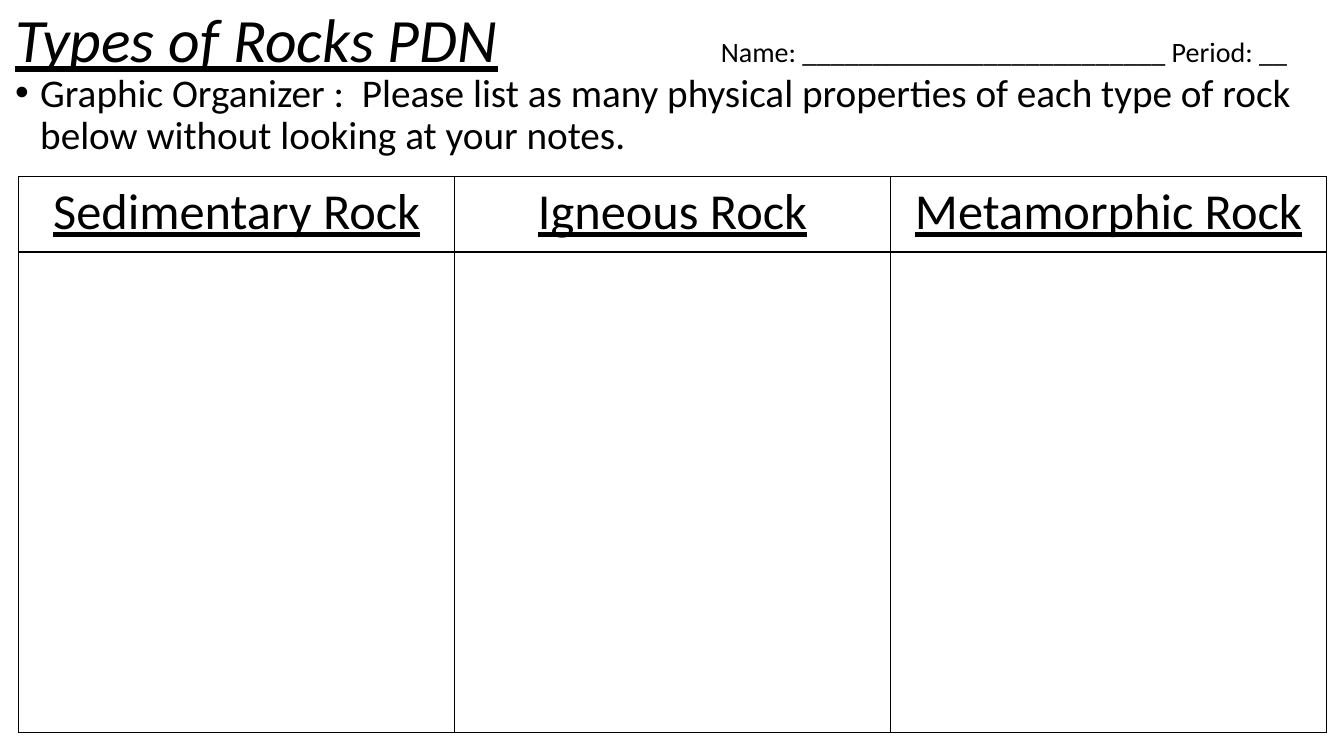
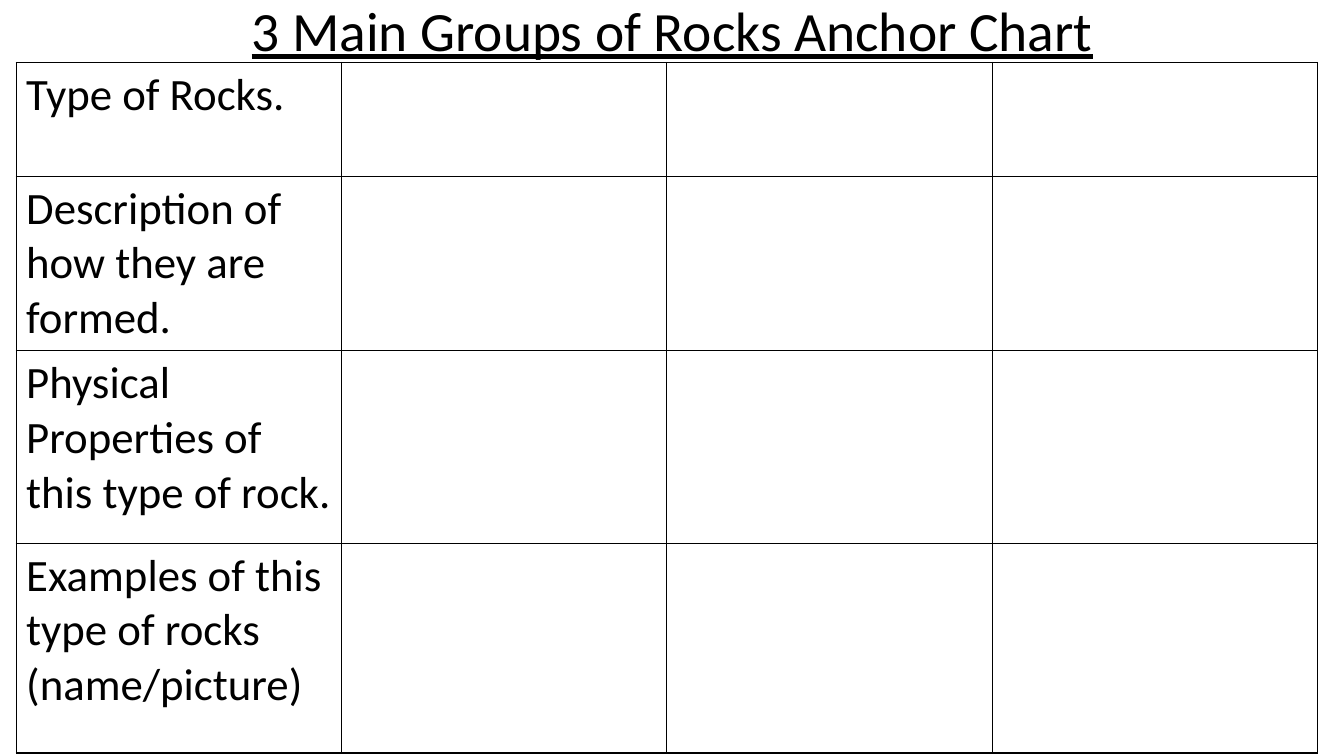
from dataclasses import dataclass

from lxml import etree
from pptx import Presentation
from pptx.dml.color import RGBColor
from pptx.enum.text import MSO_ANCHOR, PP_ALIGN
from pptx.oxml.ns import qn
from pptx.util import Emu, Inches, Pt

LEFT, CENTER = PP_ALIGN.LEFT, PP_ALIGN.CENTER
TOP, MIDDLE = MSO_ANCHOR.TOP, MSO_ANCHOR.MIDDLE


@dataclass(frozen=True)
class Theme:
    font: str = "Calibri"
    ink: str = "000000"
    paper: str = "FFFFFF"
    border: float = 1
    title: float = 44
    chart_title: float = 39.6
    heading: float = 36
    label: float = 32
    body: float = 28
    form: float = 20
    leading: float = 0.9


def write_span(para, text, theme, size, underline=False, italic=False):
    span = para.add_run()
    span.text = text
    span.font.name = theme.font
    span.font.size = Pt(size)
    span.font.color.rgb = RGBColor.from_string(theme.ink)
    span.font.underline = underline
    span.font.italic = italic


class Worksheet:
    def __init__(self, theme):
        self.theme = theme
        self.deck = Presentation()
        self.deck.slide_width = Inches(13.33)
        self.deck.slide_height = Inches(7.5)
        self.page = None

    def across(self, percent):
        return Emu(round(self.deck.slide_width * percent / 100))

    def down(self, percent):
        return Emu(round(self.deck.slide_height * percent / 100))

    def add_page(self):
        self.page = self.deck.slides.add_slide(self.deck.slide_layouts[6])

    def add_text(self, left, top, width, height, align=LEFT, anchor=TOP):
        box = self.page.shapes.add_textbox(
            self.across(left), self.down(top), self.across(width), self.down(height))
        frame = box.text_frame
        frame.word_wrap = True
        frame.vertical_anchor = anchor
        para = frame.paragraphs[0]
        para.alignment = align
        para.line_spacing = self.theme.leading
        return para

    def add_title(self, text, left, top, width, height, size, align=LEFT, italic=False):
        para = self.add_text(left, top, width, height, align, MIDDLE)
        write_span(para, text, self.theme, size, underline=True, italic=italic)
        return para

    def add_form_line(self, para, text, stop):
        tabs = etree.SubElement(para._p.get_or_add_pPr(), qn("a:tabLst"))
        etree.SubElement(tabs, qn("a:tab"), pos=str(Inches(stop)), algn="l")
        write_span(para, "\t" + text, self.theme, self.theme.form)

    def add_bullet(self, text, left, top, width, height):
        para = self.add_text(left, top, width, height)
        para.space_before = Pt(10)
        properties = para._p.get_or_add_pPr()
        properties.set("marL", str(Inches(0.25)))
        properties.set("indent", str(-Inches(0.25)))
        etree.SubElement(properties, qn("a:buFont"), typeface="Arial")
        etree.SubElement(properties, qn("a:buChar"), char="•")
        write_span(para, text, self.theme, self.theme.body)

    def style_cell(self, cell):
        properties = cell._tc.get_or_add_tcPr()
        for side in ("lnL", "lnR", "lnT", "lnB"):
            line = etree.SubElement(
                properties, qn("a:" + side), w=str(Pt(self.theme.border)))
            fill = etree.SubElement(line, qn("a:solidFill"))
            etree.SubElement(fill, qn("a:srgbClr"), val=self.theme.ink)
        cell.fill.solid()
        cell.fill.fore_color.rgb = RGBColor.from_string(self.theme.paper)

    def add_grid(self, left, top, width, columns, rows, texts, size,
                 align=LEFT, underline=False):
        grid = self.page.shapes.add_table(
            len(rows), columns, self.across(left), self.down(top),
            self.across(width), self.down(sum(rows))).table
        grid.first_row = False
        grid.horz_banding = False
        for row, height in zip(grid.rows, rows):
            row.height = self.down(height)
        for cell in grid.iter_cells():
            self.style_cell(cell)
        for (row, column), text in texts.items():
            para = grid.cell(row, column).text_frame.paragraphs[0]
            para.alignment = align
            write_span(para, text, self.theme, size, underline=underline)


def build_organizer(sheet):
    sheet.add_page()
    title = sheet.add_title("Types of Rocks PDN", 0.38, -4, 99.25, 19.33,
                            sheet.theme.title, italic=True)
    sheet.add_form_line(title, "Name: __________________________ Period: __", 7)
    sheet.add_bullet(
        "Graphic Organizer :  Please list as many physical properties of each "
        "type of rock below without looking at your notes.",
        0.38, 9.07, 99.25, 13.6)
    rocks = ("Sedimentary Rock", "Igneous Rock", "Metamorphic Rock")
    headings = {(0, column): rock for column, rock in enumerate(rocks)}
    sheet.add_grid(1.4, 23.33, 97.3, len(rocks), (10, 63.6), headings,
                   sheet.theme.heading, CENTER, underline=True)


def build_anchor_chart(sheet):
    sheet.add_page()
    sheet.add_title("3 Main Groups of Rocks Anchor Chart", 6.9, 0, 86.25, 8.8,
                    sheet.theme.chart_title, CENTER)
    topics = (
        "Type of Rocks.",
        "Description of how they are formed.",
        "Physical Properties of this type of rock.",
        "Examples of this type of rocks (name/picture)",
    )
    labels = {(row, 0): topic for row, topic in enumerate(topics)}
    sheet.add_grid(1.2, 8.27, 96.85, 4, (15.07, 23.07, 25.47, 27.73), labels,
                   sheet.theme.label)


def main():
    sheet = Worksheet(Theme())
    build_organizer(sheet)
    build_anchor_chart(sheet)
    sheet.deck.save("out.pptx")


if __name__ == "__main__":
    main()
